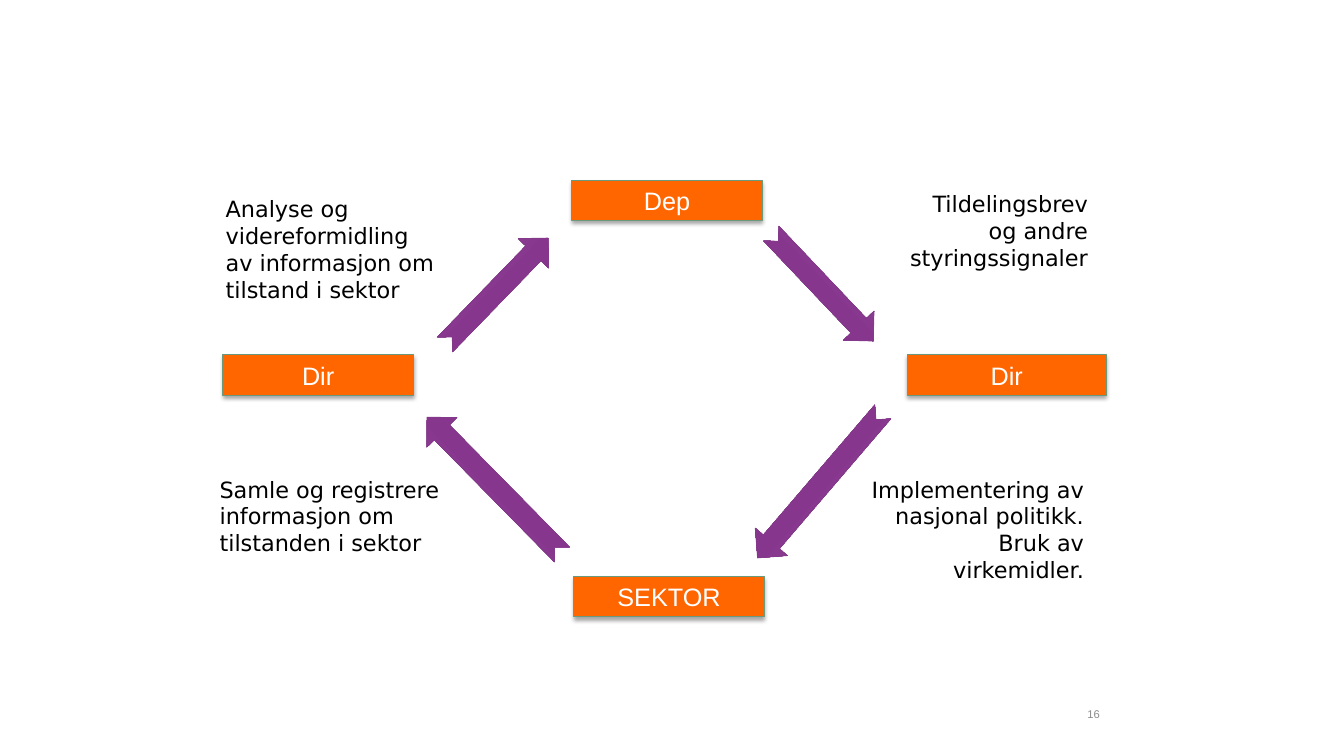
"""Build a slide showing the steering cycle between ministry, directorates and sector."""
from copy import deepcopy

from lxml import etree
from pptx import Presentation, util as u
from pptx.dml.color import RGBColor
from pptx.enum import shapes, text
from pptx.oxml import ns

ORANGE = RGBColor(0xFF, 0x66, 0x00)
GREEN = RGBColor(0x6A, 0x9A, 0x7B)
PURPLES = [RGBColor(0x93, 0x5A, 0x98), RGBColor(0x87, 0x36, 0x8E), RGBColor(0x7B, 0x2C, 0x82)]
PURPLE_EDGE = RGBColor(0x84, 0x3A, 0x8A)
WHITE = RGBColor(0xFF, 0xFF, 0xFF)
BLACK = RGBColor(0x00, 0x00, 0x00)
GRAY = RGBColor(0x8C, 0x8C, 0x8C)

LEFT, CENTER, RIGHT = text.PP_ALIGN.LEFT, text.PP_ALIGN.CENTER, text.PP_ALIGN.RIGHT
LABEL_FONT = {"name": "Arial", "size": u.Pt(18)}
NOTE_FONT = {"name": "DejaVu Sans", "size": u.Pt(16)}
NUMBER_FONT = {"name": "Arial", "size": u.Pt(8)}
BAR_HEIGHT = 0.4
ARROW_HEIGHT = 0.42

deck = Presentation()
deck.slide_width, deck.slide_height = u.Inches(13.33), u.Inches(7.5)
page = deck.slides.add_slide(deck.slide_layouts[6])


def inches(*lengths):
    return [u.Inches(length) for length in lengths]


def write(box, words, align, font, color):
    frame = box.text_frame
    frame.word_wrap = True
    frame.auto_size = text.MSO_AUTO_SIZE.SHAPE_TO_FIT_TEXT
    para = frame.paragraphs[0]
    para.alignment = align
    span = para.add_run()
    span.text = words
    for key, value in font.items():
        setattr(span.font, key, value)
    span.font.color.rgb = color


for label, left, top, width in [
    ("Dep", 5.67, 1.79, 1.89),
    ("SEKTOR", 5.69, 5.72, 1.89),
    ("Dir", 9, 3.52, 1.97),
    ("Dir", 2.21, 3.52, 1.89),
]:
    bar = page.shapes.add_shape(shapes.MSO_SHAPE.RECTANGLE, *inches(left, top, width, BAR_HEIGHT))
    bar.fill.solid()
    bar.fill.fore_color.rgb = ORANGE
    bar.line.color.rgb = GREEN
    bar.line.width = u.Pt(0.5)
    bar.shadow.inherit = False
    effects = bar._element.spPr.find(ns.qn("a:effectLst"))
    shadow = etree.SubElement(effects, ns.qn("a:outerShdw"), blurRad=str(u.Pt(3.1)),
                              dist=str(u.Pt(1.8)), dir="5400000", rotWithShape="0")
    shade = etree.SubElement(shadow, ns.qn("a:srgbClr"), val=str(BLACK))
    etree.SubElement(shade, ns.qn("a:alpha"), val="35000")
    write(bar, label, CENTER, LABEL_FONT, WHITE)

for words, align, *place in [
    ("Tildelingsbrev og andre styringssignaler", RIGHT, 8.92, 1.84, 1.97, 0.91),
    ("Implementering av nasjonal politikk. Bruk av virkemidler.", RIGHT, 8.49, 4.67, 2.36, 1.18),
    ("Samle og registrere informasjon om tilstanden i sektor", LEFT, 2.08, 4.67, 2.57, 0.91),
    ("Analyse og videreformidling av informasjon om tilstand i sektor", LEFT, 2.14, 1.89, 2.27, 1.45),
]:
    write(page.shapes.add_textbox(*inches(*place)), words, align, NOTE_FONT, BLACK)

for left, top, width, angle in [
    (3.95, 4.61, 1.91, 225.5),
    (4.19, 2.68, 1.47, 314.1),
    (7.42, 2.64, 1.47, 46.5),
    (7.18, 4.6, 1.91, 130.6),
]:
    arrow = page.shapes.add_shape(shapes.MSO_SHAPE.NOTCHED_RIGHT_ARROW,
                                  *inches(left, top, width, ARROW_HEIGHT))
    arrow.rotation = angle
    arrow.shadow.inherit = False
    arrow.line.color.rgb = PURPLE_EDGE
    arrow.line.width = u.Pt(0.5)
    arrow.fill.gradient()
    arrow.fill.gradient_angle = 270
    stops = arrow._element.spPr.find(ns.qn("a:gradFill")).find(ns.qn("a:gsLst"))
    stops.insert(1, deepcopy(stops[0]))
    for index, (stop, purple) in enumerate(zip(arrow.fill.gradient_stops, PURPLES)):
        stop.position = index / 2
        stop.color.rgb = purple

number = page.shapes.add_textbox(*inches(8.83, 6.83, 2.08, 0.5))
write(number, "16", RIGHT, NUMBER_FONT, GRAY)
for key, value in {"auto_size": text.MSO_AUTO_SIZE.NONE, "margin_right": 0,
                   "vertical_anchor": text.MSO_ANCHOR.MIDDLE}.items():
    setattr(number.text_frame, key, value)

deck.save("out.pptx")
